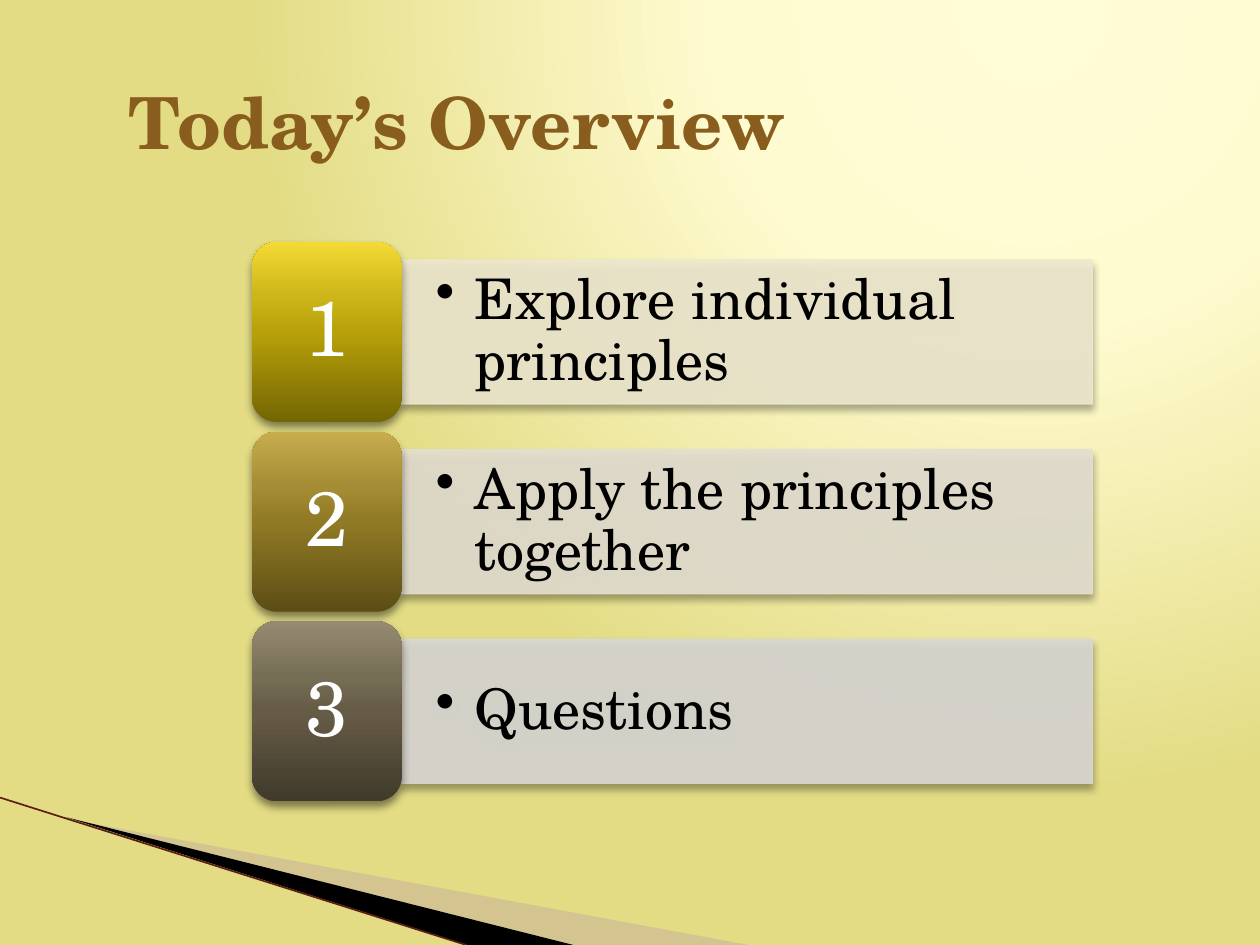
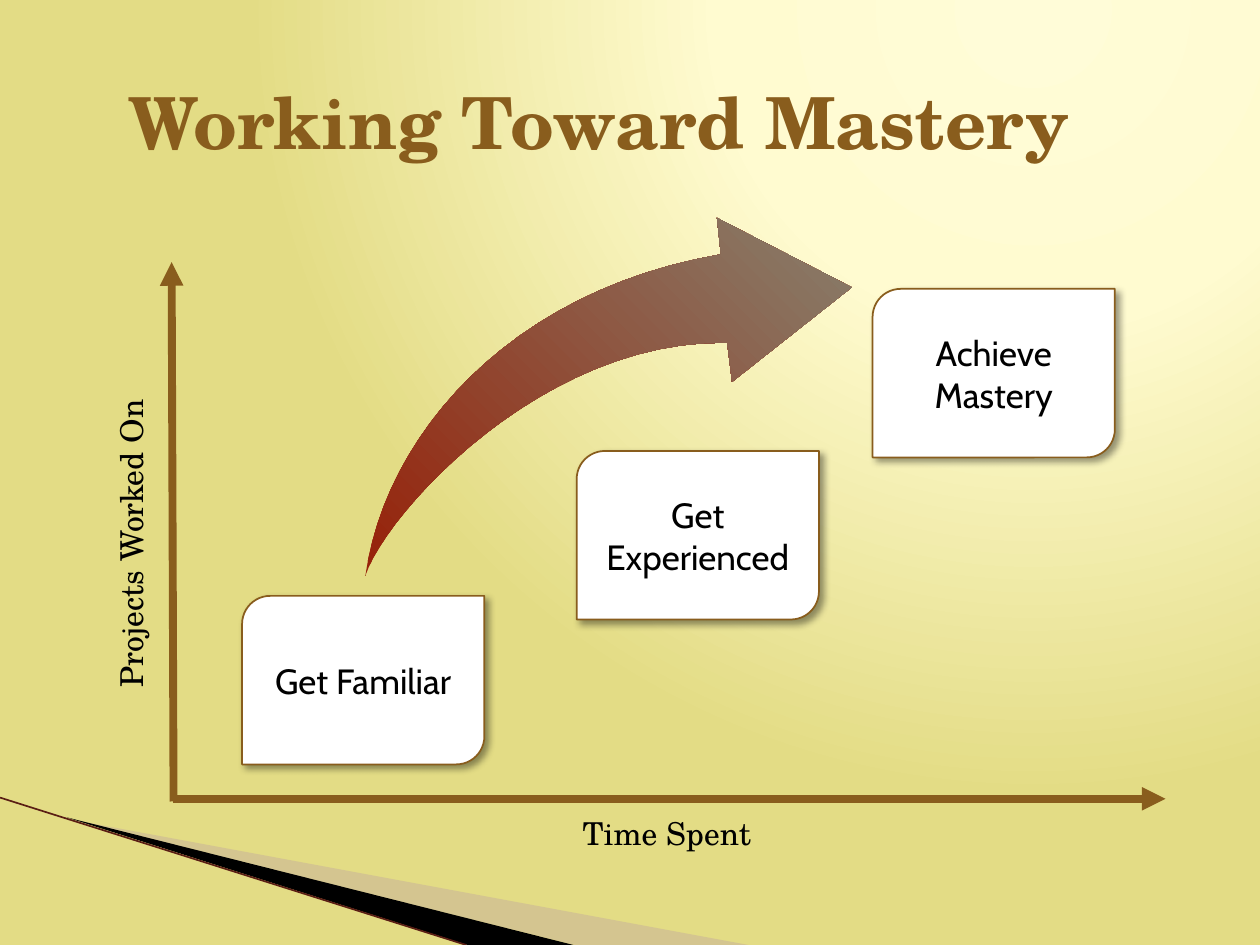
import dataclasses

import pptx
import pptx.dml.color
import pptx.enum.shapes
import pptx.enum.text
import pptx.oxml
import pptx.oxml.ns
import pptx.util

SERIF = "TeX Gyre Schola"
SANS = "Cabin"
BROWN = "895D1D"
BLACK = "000000"
WHITE = "FFFFFF"
MAROON = "5A1E14"
BACKDROP = [(0, "FFFCD8"), (40, "FFFBD0"), (100, "E3DC85")]
ARROW_STOPS = [(0, "972109"), (100, "877F6C")]
NAMESPACE = pptx.oxml.ns.nsdecls("a")
SHAPES = pptx.enum.shapes.MSO_SHAPE
CENTER = pptx.enum.text.PP_ALIGN.CENTER
MIDDLE = pptx.enum.text.MSO_ANCHOR.MIDDLE

AGENDA = [
    ("Explore individual principles", "EEE8CF", ("746603", "B7A10A", "CDB61A", "F4DA35")),
    ("Apply the principles together", "E4DFD1", ("5C4D15", "917A25", "A58D35", "C8AD4F")),
    ("Questions", "D9D8D4", ("403A2B", "665C46", "776E56", "968B72")),
]
STEPS = [
    ("Get Familiar", 0.07, 0.622),
    ("Get Experienced", 0.407, 0.352),
    ("Achieve Mastery", 0.705, 0.05),
]


@dataclasses.dataclass
class Box:
    """A rectangle in inches."""

    left: float
    top: float
    width: float
    height: float

    def point(self, across, down):
        """Return the EMU position at shares of the box."""
        return (pptx.util.Inches(self.left + across * self.width),
                pptx.util.Inches(self.top + down * self.height))

    def inner(self, across, down, width, height):
        """Return the inner box at shares of this one."""
        return Box(self.left + across * self.width, self.top + down * self.height,
                   width * self.width, height * self.height)

    def frame(self):
        """Return left, top, width and height in EMU."""
        return [pptx.util.Inches(length)
                for length in (self.left, self.top, self.width, self.height)]


PAGE = Box(0, 0, 10, 7.5)


def color(value):
    """Turn a hex string into a colour."""
    return pptx.dml.color.RGBColor.from_string(value)


def qualified(tag):
    """Expand a prefixed tag name."""
    return pptx.oxml.ns.qn(tag)


def set_alpha(properties, percent):
    """Make every solid colour below the properties partly transparent."""
    for paint in properties.iter(qualified("a:srgbClr")):
        paint.append(pptx.oxml.parse_xml(f'<a:alpha {NAMESPACE} val="{percent * 1000}"/>'))


def set_gradient(properties, stops, direction):
    """Replace a solid fill by a gradient with the given direction XML."""
    stop_xml = "".join(f'<a:gs pos="{position * 1000}"><a:srgbClr val="{value}"/></a:gs>'
                       for position, value in stops)
    gradient = pptx.oxml.parse_xml(f'<a:gradFill {NAMESPACE} rotWithShape="1">'
                                   f'<a:gsLst>{stop_xml}</a:gsLst>{direction}</a:gradFill>')
    properties.replace(properties.find(qualified("a:solidFill")), gradient)


def linear(degrees):
    """Return the direction XML of a linear gradient."""
    return f'<a:lin ang="{degrees * 60000}" scaled="0"/>'


def set_shadow(shape, alpha, blur, distance, degrees):
    """Give a shape a black outer shadow."""
    effects = shape.element.spPr.find(qualified("a:effectLst"))
    effects.append(pptx.oxml.parse_xml(
        f'<a:outerShdw {NAMESPACE} blurRad="{pptx.util.Pt(blur)}" '
        f'dist="{pptx.util.Pt(distance)}" dir="{degrees * 60000}" algn="ctr" rotWithShape="0">'
        f'<a:srgbClr val="{BLACK}"><a:alpha val="{alpha * 1000}"/></a:srgbClr></a:outerShdw>'))


def style_shape(shape, fill, line=None, width=1):
    """Set the fill and the outline, without the theme's shadow."""
    shape.shadow.inherit = False
    shape.fill.solid()
    shape.fill.fore_color.rgb = color(fill)
    if line:
        shape.line.color.rgb = color(line)
        shape.line.width = pptx.util.Pt(width)
    else:
        shape.line.fill.background()


def write(shape, text, size, font=SERIF, value=BLACK, bold=False, align=CENTER,
          insets=(0.1, 0.05)):
    """Put one formatted paragraph in a shape and return it."""
    text_frame = shape.text_frame
    text_frame.text = text
    text_frame.word_wrap = True
    text_frame.vertical_anchor = MIDDLE
    text_frame.margin_left = text_frame.margin_right = pptx.util.Inches(insets[0])
    text_frame.margin_top = text_frame.margin_bottom = pptx.util.Inches(insets[1])
    paragraph = text_frame.paragraphs[0]
    paragraph.alignment = align
    for run in paragraph.runs:
        run.font.name = font
        run.font.size = pptx.util.Pt(size)
        run.font.bold = bold
        run.font.color.rgb = color(value)
    return paragraph


def add_bullet(paragraph, indent):
    """Give a paragraph a hanging round bullet."""
    properties = paragraph._p.get_or_add_pPr()
    properties.set("marL", str(pptx.util.Inches(indent)))
    properties.set("indent", str(-pptx.util.Inches(indent)))
    properties.append(pptx.oxml.parse_xml(f'<a:buChar {NAMESPACE} char="•"/>'))


def add_line(slide, start, end, value, width, arrow=False):
    """Draw a straight line, with an arrowhead at its end if asked."""
    line = slide.shapes.add_connector(pptx.enum.shapes.MSO_CONNECTOR.STRAIGHT, *start, *end)
    line.line.color.rgb = color(value)
    line.line.width = pptx.util.Pt(width)
    if arrow:
        line.element.spPr.find(qualified("a:ln")).append(
            pptx.oxml.parse_xml(f'<a:tailEnd {NAMESPACE} type="triangle"/>'))
    line.element.spPr.append(pptx.oxml.parse_xml(f"<a:effectLst {NAMESPACE}/>"))


def add_outline(slide, points, fill):
    """Draw a closed filled outline through EMU points."""
    builder = slide.shapes.build_freeform(*points[0], scale=1.0)
    builder.add_line_segments(points[1:], close=True)
    shape = builder.convert_to_shape()
    style_shape(shape, fill)
    return shape


def curve(start, first, second, end, count=24):
    """Return points along a cubic curve."""
    shares = [step / count for step in range(count + 1)]
    return [tuple((1 - t) ** 3 * a + 3 * (1 - t) ** 2 * t * b + 3 * (1 - t) * t ** 2 * c
                  + t ** 3 * d for a, b, c, d in zip(start, first, second, end))
            for t in shares]


def draw_corner(slide, box):
    """Draw the pointed bands in the lower left corner."""
    pale = [box.point(*place) for place in ((0.055, 0.867), (0.594, 1), (0.456, 1))]
    dark = [box.point(*place) for place in ((0.053, 0.865), (0.455, 1), (0.371, 1))]
    set_alpha(add_outline(slide, pale, "BFA4A1").element.spPr, 40)
    add_outline(slide, dark, BLACK)
    add_line(slide, box.point(0, 0.844), box.point(0.37, 1), MAROON, 0.95)


def start_slide(presentation, title):
    """Add a slide with the shared background, corner and title."""
    slide = presentation.slides.add_slide(presentation.slide_layouts[6])
    slide.background.fill.solid()
    slide.background.fill.fore_color.rgb = color(WHITE)
    set_gradient(slide.element.find(".//" + qualified("p:bgPr")), BACKDROP,
                 '<a:path path="circle">'
                 '<a:fillToRect l="65000" t="0" r="0" b="98000"/></a:path>')
    draw_corner(slide, PAGE)
    title_box = slide.shapes.add_textbox(*Box(0.92, 0.33, 8.83, 1.25).frame())
    write(title_box, title, 41, value=BROWN, bold=True, align=pptx.enum.text.PP_ALIGN.LEFT)
    return slide


def draw_agenda_row(slide, box, number, text, bar_color, badge_colors):
    """Draw a numbered badge with its bar of text."""
    bar = slide.shapes.add_shape(SHAPES.RECTANGLE, *box.inner(0.178, 0.1, 0.822, 0.8).frame())
    style_shape(bar, bar_color, bar_color, 0.75)
    set_alpha(bar.element.spPr, 90)
    set_shadow(bar, 35, 4, 3, 90)
    paragraph = write(bar, text, 32, align=pptx.enum.text.PP_ALIGN.LEFT, insets=(0.27, 0.14))
    add_bullet(paragraph, 0.31)
    paragraph.line_spacing = 0.9

    badge = slide.shapes.add_shape(SHAPES.ROUNDED_RECTANGLE, *box.inner(0, 0, 0.178, 1).frame())
    style_shape(badge, badge_colors[0])
    set_gradient(badge.element.spPr, zip((0, 50, 70, 100), badge_colors), linear(270))
    set_shadow(badge, 45, 5, 3, 90)
    write(badge, str(number), 44, value=WHITE, insets=(0.18, 0.09)).line_spacing = 0.9


def draw_agenda(slide, box):
    """Stack the agenda rows with equal gaps."""
    height = 0.322
    pitch = (1 - height) / (len(AGENDA) - 1)
    for index, row in enumerate(AGENDA):
        draw_agenda_row(slide, box.inner(0, index * pitch, 1, height), index + 1, *row)


def draw_axes(slide, box):
    """Draw both axes and their labels around the plot box."""
    add_line(slide, box.point(0, 1), box.point(1, 1), BROWN, 4.5, arrow=True)
    add_line(slide, box.point(0.001, 1.005), box.point(-0.001, 0), BROWN, 4.5, arrow=True)
    for text, place, rotation in (("Time Spent", (0.027, 1.016, 0.942, 0.094), 0),
                                  ("Projects Worked On", (-0.3, 0.477, 0.515, 0.094), 270)):
        label = slide.shapes.add_textbox(*box.inner(*place).frame())
        label.rotation = rotation
        write(label, text, 18)


def draw_steps(slide, box):
    """Place the step cards in the plot box."""
    for text, across, down in STEPS:
        card = slide.shapes.add_shape(SHAPES.ROUND_2_DIAG_RECTANGLE,
                                      *box.inner(across, down, 0.244, 0.314).frame())
        style_shape(card, WHITE, BROWN)
        set_shadow(card, 40, 4, 3, 45)
        write(card, text, 20, font=SANS, insets=(0.05, 0.05))


def draw_growth_arrow(slide, box):
    """Draw the swelling curved arrow inside its box."""
    outer = curve((0, 1), (0.04, 0.613), (0.293, 0.204), (0.731, 0.102))
    head = [(0.723, 0), (1, 0.194), (0.754, 0.458)]
    underside = curve((0.744, 0.349), (0.368, 0.338), (0.044, 0.82), (0, 1))
    points = [box.point(*place) for place in outer + head + underside]
    arrow = add_outline(slide, points, ARROW_STOPS[0][1])
    set_gradient(arrow.element.spPr, ARROW_STOPS, linear(315))


def main():
    """Build both slides and save them."""
    presentation = pptx.Presentation()
    presentation.slide_width = pptx.util.Inches(PAGE.width)
    presentation.slide_height = pptx.util.Inches(PAGE.height)

    overview = start_slide(presentation, "Today’s Overview")
    draw_agenda(overview, Box(2, 1.92, 6.67, 4.44))

    mastery = start_slide(presentation, "Working Toward Mastery")
    plot = Box(1.37, 2.08, 7.88, 4.26)
    draw_axes(mastery, plot)
    draw_steps(mastery, plot)
    draw_growth_arrow(mastery, Box(2.9, 1.73, 3.86, 2.84))

    presentation.save("out.pptx")


if __name__ == "__main__":
    main()
